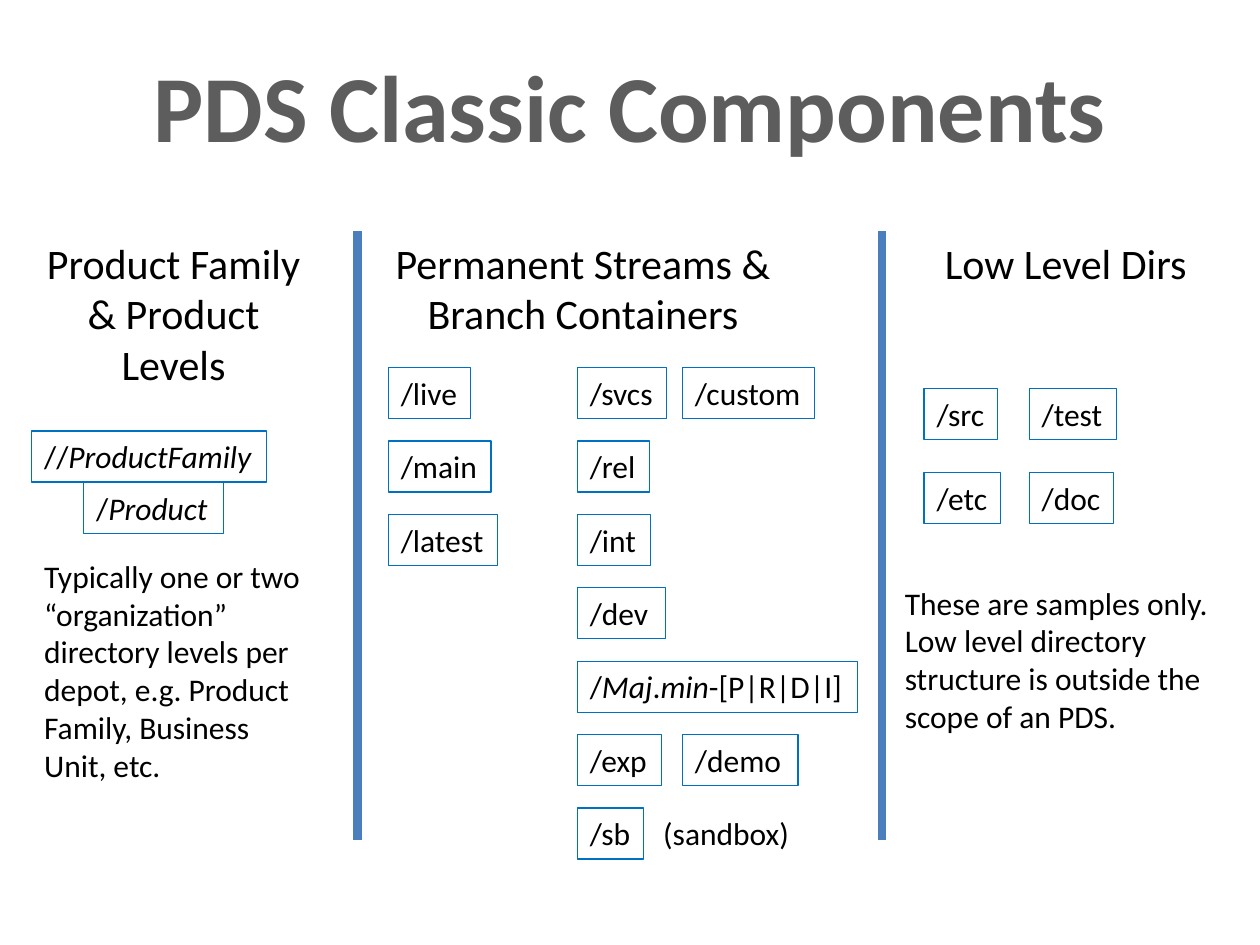
from pptx import Presentation
from pptx.dml.color import RGBColor
from pptx.enum.shapes import MSO_CONNECTOR, MSO_SHAPE
from pptx.enum.text import MSO_ANCHOR, MSO_AUTO_SIZE, PP_ALIGN
from pptx.oxml.ns import qn
from pptx.util import Cm, Pt
from lxml import etree

RECTANGLE = MSO_SHAPE.RECTANGLE
STRAIGHT = MSO_CONNECTOR.STRAIGHT
TOP = MSO_ANCHOR.TOP
FIT_SHAPE = MSO_AUTO_SIZE.SHAPE_TO_FIT_TEXT
LEFT, CENTER = PP_ALIGN.LEFT, PP_ALIGN.CENTER


def rgb(hex_string):
    return RGBColor.from_string(hex_string)


def write_text(frame, text, font="Calibri", size=18, color="000000",
               bold=False, align=LEFT, wrap=True):
    """Fill a frame: newlines part paragraphs, asterisks enclose italics."""
    frame.word_wrap = wrap
    frame.auto_size = FIT_SHAPE
    frame.vertical_anchor = TOP
    for number, line in enumerate(text.split("\n")):
        paragraph = frame.add_paragraph() if number else frame.paragraphs[0]
        paragraph.alignment = align
        for position, piece in enumerate(line.split("*")):
            if not piece:
                continue
            run = paragraph.add_run()
            run.text = piece
            run.font.name = font
            run.font.size = Pt(size)
            run.font.bold = bold
            run.font.italic = position % 2 == 1
            run.font.color.rgb = rgb(color)


class ComponentSlide:
    title_color = "5D5D5D"
    border_color = "0070C0"
    divider_color = "4B7EBC"
    box_height = 1.03

    def __init__(self, slide):
        self.slide = slide

    def text(self, text, left, top, width, height, **text_format):
        label = self.slide.shapes.add_textbox(
            Cm(left), Cm(top), Cm(width), Cm(height))
        write_text(label.text_frame, text, **text_format)

    def heading(self, text, left, width, height):
        self.text(text, left, 4.66, width, height, size=24, align=CENTER)

    def directory(self, text, left, top, width):
        box = self.slide.shapes.add_shape(
            RECTANGLE, Cm(left), Cm(top), Cm(width), Cm(self.box_height))
        box.shadow.inherit = False
        box.fill.background()
        box.line.color.rgb = rgb(self.border_color)
        box.line.width = Pt(0.75)
        write_text(box.text_frame, text, wrap=False)

    def divider(self, x, top, bottom):
        rule = self.slide.shapes.add_connector(
            STRAIGHT, Cm(x), Cm(top), Cm(x), Cm(bottom))
        rule.line.color.rgb = rgb(self.divider_color)
        rule.line.width = Pt(5)
        etree.SubElement(rule._element.spPr, qn("a:effectLst"))


def main():
    deck = Presentation()
    deck.slide_width, deck.slide_height = Cm(25.4), Cm(19.05)
    components = ComponentSlide(deck.slides.add_slide(deck.slide_layouts[6]))

    # Title and column dividers
    components.text("PDS Classic Components", 0, 0.85, 25.4, 2.56, size=54,
                    bold=True, color=components.title_color, align=CENTER)
    for divider_x in (7.2, 17.78):
        components.divider(divider_x, 4.66, 16.93)

    # Product family and product levels
    components.heading("Product Family & Product\nLevels", 0.64, 5.72, 4.37)
    components.directory("//*ProductFamily*", 0.64, 8.69, 4.74)
    components.directory("/*Product*", 1.69, 9.73, 2.82)
    components.text("Typically one or two “organization” directory levels per "
                    "depot, e.g. Product Family, Business Unit, etc.",
                    0.64, 11.1, 5.72, 4.88)

    # Permanent streams and branch containers: (name, width) by row
    components.heading("Permanent Streams & Branch Containers",
                       7.41, 8.69, 3.33)
    stream_columns = {
        7.83: {0: ("/live", 1.65), 1: ("/main", 2.07), 2: ("/latest", 2.2)},
        11.64: {0: ("/svcs", 1.8), 1: ("/rel", 1.46), 2: ("/int", 1.48),
                3: ("/dev", 1.78), 4: ("/*Maj*.*min*-[P|R|D|I]", 5.65),
                5: ("/exp", 1.69), 6: ("/sb", 1.34)},
        13.76: {0: ("/custom", 2.66), 5: ("/demo", 2.33)},
    }
    first_row, row_pitch = 7.41, 1.48
    for left, streams in stream_columns.items():
        for row, (name, width) in streams.items():
            components.directory(name, left, first_row + row * row_pitch, width)
    components.text("(sandbox)", 13.12, first_row + 6 * row_pitch, 5.72, 1.03)

    # Low level directories
    components.heading("Low Level Dirs", 17.99, 6.99, 1.28)
    low_level_rows = {
        7.83: (("/src", 1.48), ("/test", 1.76)),
        9.53: (("/etc", 1.54), ("/doc", 1.7)),
    }
    for top, directories in low_level_rows.items():
        for left, (name, width) in zip((18.63, 20.75), directories):
            components.directory(name, left, top, width)
    components.text("These are samples only. Low level directory structure "
                    "is outside the scope of an PDS.", 17.99, 11.64, 6.99, 3.33)

    deck.save("out.pptx")


if __name__ == "__main__":
    main()
